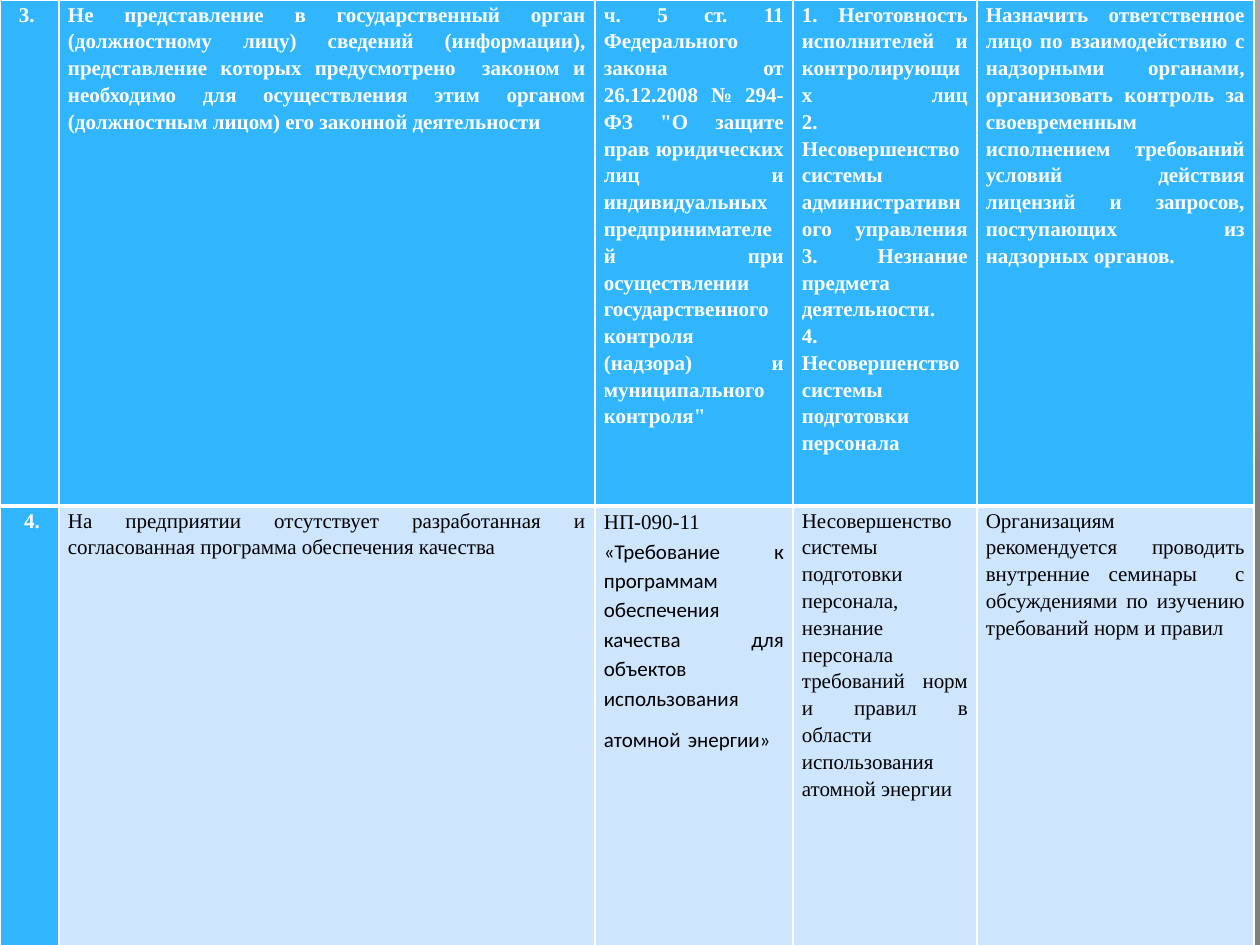
"""Build a slide with a table of violations, their causes and remedies."""
from lxml.etree import SubElement
from pptx import Presentation
from pptx.dml.color import RGBColor
from pptx.enum.text import PP_ALIGN as Align
from pptx.oxml.ns import qn
from pptx.util import Pt

PX = 914400 // 126
SERIF, SANS = "Times New Roman", "Calibri"
BLUE, PALE, WHITE, BLACK = "31B6FD", "CEE5FE", "FFFFFF", "000000"


def write(cell, runs, align=Align.JUSTIFY, color=BLACK, bold=False):
    para = cell.text_frame.paragraphs[0]
    para.alignment, para.line_spacing = align, 1.15
    for text, face, size in runs:
        for i, line in enumerate(text.split("\n")):
            if i:
                para.add_line_break()
            run = para.add_run()
            run.text = line
            font = run.font
            font.name, font.size, font.bold = face, Pt(size), bold
            font.color.rgb = RGBColor.from_string(color)


def edge(cell, side, width):
    line = SubElement(cell._tc.get_or_add_tcPr(), qn(f"a:ln{side}"), w=str(Pt(width)))
    fill = SubElement(line, qn("a:solidFill"))
    SubElement(fill, qn("a:srgbClr"), val=WHITE)


deck = Presentation()
deck.slide_width, deck.slide_height = 1260 * PX, 945 * PX
slide = deck.slides.add_slide(deck.slide_layouts[6])

back = slide.background.fill
back.gradient()
grad = slide._element.find(".//" + qn("a:gradFill"))
for child in list(grad):
    grad.remove(child)
stops = SubElement(grad, qn("a:gsLst"))
for pos, color in ((0, "FFFFFF"), (40, "FEFEFE"), (100, "7F7F7F")):
    stop = SubElement(stops, qn("a:gs"), pos=str(pos * 1000))
    SubElement(stop, qn("a:srgbClr"), val=color)
shade = SubElement(grad, qn("a:path"), path="circle")
SubElement(shade, qn("a:fillToRect"), l="50000", t="-80000", r="50000", b="180000")

rows = [
    [
        "3. ",
        "Не представление в государственный орган (должностному лицу) сведений "
        "(информации), представление которых предусмотрено  законом и необходимо для "
        "осуществления этим органом (должностным лицом) его законной деятельности",
        "ч. 5 ст. 11 Федерального закона от 26.12.2008 № 294-ФЗ \"О защите прав "
        "юридических лиц и индивидуальных предпринимателей при осуществлении "
        "государственного контроля (надзора) и муниципального контроля\"",
        "1. Неготовность исполнителей и контролирующих лиц\n"
        "2. Несовершенство системы административного управления\n"
        "3. Незнание предмета деятельности.\n"
        "4. Несовершенство системы подготовки персонала",
        "Назначить ответственное лицо по взаимодействию с надзорными органами, "
        "организовать контроль за своевременным исполнением требований условий "
        "действия лицензий и запросов, поступающих из надзорных органов.",
    ],
    [
        " 4.",
        "На предприятии отсутствует разработанная и согласованная программа "
        "обеспечения качества",
        [
            ("НП-090-11", SERIF, 12),
            (" «Требование к программам обеспечения качества для объектов "
             "использования атомной", SANS, 12),
            (" ", SANS, 18),
            ("энергии»", SANS, 12),
        ],
        "Несовершенство системы подготовки персонала, незнание персонала требований "
        "норм и правил в области использования атомной энергии",
        "Организациям рекомендуется проводить внутренние семинары  с обсуждениями "
        "по изучению требований норм и правил",
    ],
]
wide, high = [59, 536, 198, 184, 277], [506, 476]

frame = slide.shapes.add_table(2, 5, 0, 0, sum(wide) * PX, sum(high) * PX)
table = frame.table
for col, size in zip(table.columns, wide):
    col.width = size * PX
for r, (row, size) in enumerate(zip(rows, high)):
    table.rows[r].height = size * PX
    for c, text in enumerate(row):
        cell = table.cell(r, c)
        cell.margin_left = cell.margin_right = 9 * PX
        cell.margin_top = cell.margin_bottom = 0
        for side, width in (("L", 1), ("R", 1), ("T", 3 if r else 1), ("B", 1 if r else 3)):
            edge(cell, side, width)
        head = r == 0 or c == 0
        cell.fill.solid()
        cell.fill.fore_color.rgb = RGBColor.from_string(BLUE if head else PALE)
        runs = [(text, SERIF, 12)] if isinstance(text, str) else text
        write(cell, runs, align=Align.JUSTIFY if c else Align.CENTER,
              color=WHITE if head else BLACK, bold=head)

deck.save("out.pptx")
